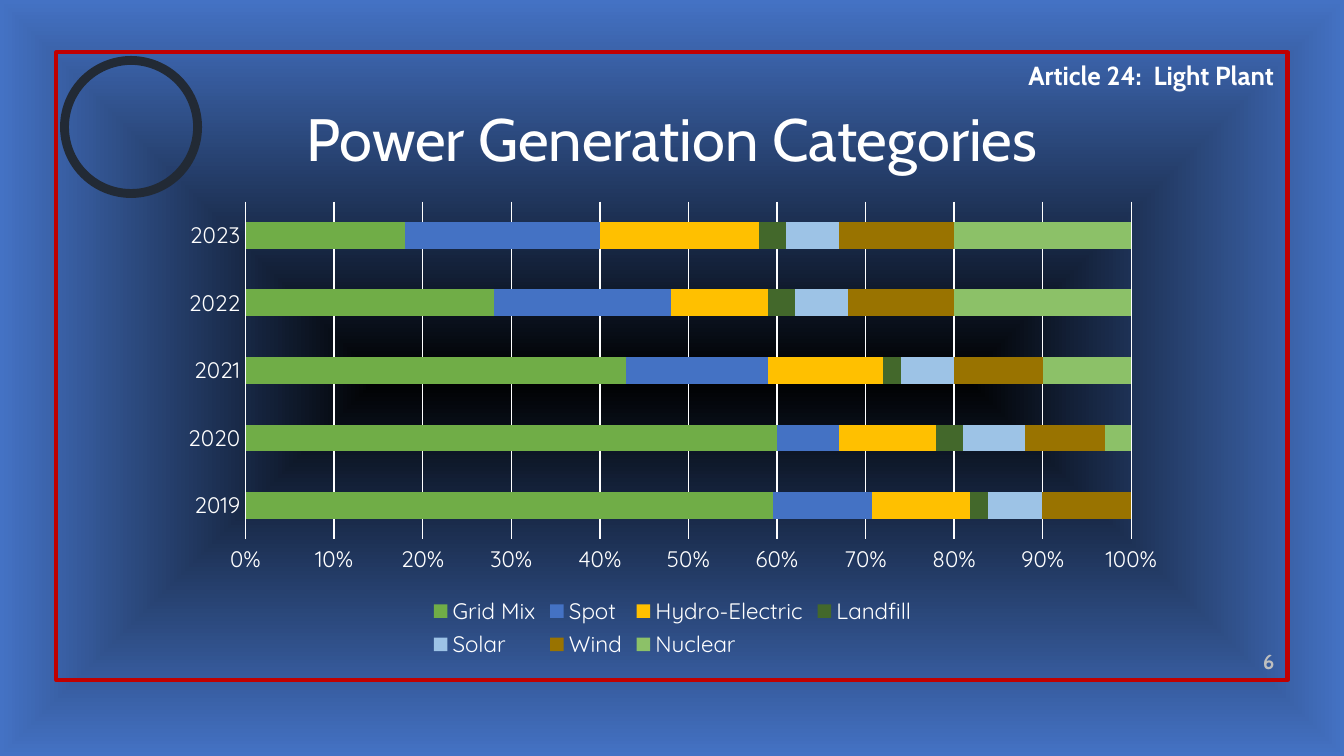
from pptx import Presentation
from pptx.chart.data import CategoryChartData
from pptx.dml.color import RGBColor
from pptx.enum.chart import XL_CHART_TYPE, XL_LEGEND_POSITION, XL_TICK_MARK
from pptx.enum.shapes import MSO_SHAPE
from pptx.enum.text import MSO_ANCHOR, PP_ALIGN
from pptx.oxml import parse_xml
from pptx.oxml.ns import nsdecls
from pptx.util import Inches, Pt

RECTANGLE, OVAL = MSO_SHAPE.RECTANGLE, MSO_SHAPE.OVAL
TOP, MIDDLE, BOTTOM = MSO_ANCHOR.TOP, MSO_ANCHOR.MIDDLE, MSO_ANCHOR.BOTTOM
CENTER, RIGHT = PP_ALIGN.CENTER, PP_ALIGN.RIGHT
NO_TICK = XL_TICK_MARK.NONE
STACKED_BARS = XL_CHART_TYPE.BAR_STACKED_100
LEGEND_BOTTOM = XL_LEGEND_POSITION.BOTTOM

WHITE = RGBColor(0xFF, 0xFF, 0xFF)
LIGHT_GRAY = RGBColor(0xBF, 0xBF, 0xBF)
RED = RGBColor(0xC0, 0x00, 0x00)
SLATE = RGBColor(0x22, 0x2A, 0x35)
GREEN = RGBColor(0x70, 0xAD, 0x47)
BLUE = RGBColor(0x44, 0x72, 0xC4)
YELLOW = RGBColor(0xFF, 0xC0, 0x00)
DARK_GREEN = RGBColor(0x43, 0x68, 0x2B)
PALE_BLUE = RGBColor(0x9D, 0xC3, 0xE6)
BROWN = RGBColor(0x99, 0x73, 0x00)
PALE_GREEN = RGBColor(0x8C, 0xC1, 0x68)
BLACK = RGBColor(0x00, 0x00, 0x00)

YEARS = ["2019", "2020", "2021", "2022", "2023"]
SOURCES = [
    ("Grid Mix", [59, 60, 43, 28, 18], GREEN),
    ("Spot", [11, 7, 16, 20, 22], BLUE),
    ("Hydro-Electric", [11, 11, 13, 11, 18], YELLOW),
    ("Landfill", [2, 3, 2, 3, 3], DARK_GREEN),
    ("Solar", [6, 7, 6, 6, 6], PALE_BLUE),
    ("Wind", [10, 9, 10, 12, 13], BROWN),
    ("Nuclear", [0, 3, 10, 20, 20], PALE_GREEN),
]


def set_font(font, size, color, name, bold=False):
    for attribute, value in {"size": Pt(size), "name": name, "bold": bold}.items():
        setattr(font, attribute, value)
    font.color.rgb = color


def write_text(holder, text, size, color, align, anchor, bold=False):
    frame = holder.text_frame
    frame.word_wrap = True
    frame.vertical_anchor = anchor
    frame.text = text
    frame.paragraphs[0].alignment = align
    set_font(frame.paragraphs[0].runs[0].font, size, color, "Cabin", bold)


prs = Presentation()
prs.slide_width = Inches(10)
prs.slide_height = prs.slide_width * 9 // 16
slide = prs.slides.add_slide(prs.slide_layouts[5])

slide.background.fill.solid()
backdrop = slide.background.fill._xPr
backdrop.replace(backdrop[0], parse_xml(
    f'<a:gradFill {nsdecls("a")} rotWithShape="1"><a:gsLst>'
    f'<a:gs pos="0"><a:srgbClr val="{BLACK}"/></a:gs>'
    f'<a:gs pos="100000"><a:srgbClr val="{BLUE}"/></a:gs></a:gsLst>'
    '<a:path path="shape"><a:fillToRect l="50000" t="50000" r="50000" b="50000"/></a:path>'
    '</a:gradFill>'))

for outline, left, top, width, height, color, weight in [
    (RECTANGLE, 0.42, 0.39, 9.16, 4.67, RED, 2.25),
    (OVAL, 0.48, 0.45, 0.99, 0.99, SLATE, 4.75),
]:
    border = slide.shapes.add_shape(
        outline, Inches(left), Inches(top), Inches(width), Inches(height))
    border.shadow.inherit = False
    border.fill.background()
    border.line.color.rgb = color
    border.line.width = Pt(weight)

title = slide.shapes.title
title.left, title.top = Inches(0.5), Inches(0.65)
title.width, title.height = Inches(9), Inches(0.75)
write_text(title, "Power Generation Categories", 32, WHITE, CENTER, MIDDLE)

article = slide.shapes.add_textbox(Inches(6.91), Inches(0.39), Inches(2.67), Inches(0.34))
write_text(article, "Article 24:  Light Plant", 14, WHITE, RIGHT, TOP, bold=True)

page_number = slide.shapes.add_textbox(Inches(9), Inches(4.82), Inches(0.58), Inches(0.24))
write_text(page_number, "6", 11, LIGHT_GRAY, RIGHT, BOTTOM, bold=True)

power_data = CategoryChartData(number_format="#,##0.00")
power_data.categories = YEARS
for source, shares, color in SOURCES:
    power_data.add_series(source, shares)
chart = slide.shapes.add_chart(
    STACKED_BARS, Inches(1.25), Inches(1.43), Inches(7.51), Inches(3.51), power_data).chart
set_font(chart.font, 10, WHITE, "Quicksand")
chart.has_title = False

bars = chart.plots[0]
bars.gap_width, bars.overlap = 150, 100
bars.vary_by_categories = False
for series, (source, shares, color) in zip(bars.series, SOURCES):
    series.format.fill.solid()
    series.format.fill.fore_color.rgb = color

year_axis, share_axis = chart.category_axis, chart.value_axis
for axis in (year_axis, share_axis):
    axis.major_tick_mark = axis.minor_tick_mark = NO_TICK
    set_font(axis.tick_labels.font, 12, WHITE, "Quicksand")
share_axis.minimum_scale, share_axis.maximum_scale = 0, 1
share_axis.major_unit = 0.1
share_axis.tick_labels.number_format = "0%"
share_axis.tick_labels.number_format_is_linked = False
share_axis.format.line.fill.background()
year_axis.has_major_gridlines = False
share_axis.has_major_gridlines = True
for line in (year_axis.format.line, share_axis.major_gridlines.format.line):
    line.color.rgb = WHITE
    line.width = Pt(0.75)

chart.has_legend = True
chart.legend.position = LEGEND_BOTTOM
chart.legend.include_in_layout = False
set_font(chart.legend.font, 12, WHITE, "Quicksand")

prs.save("out.pptx")
